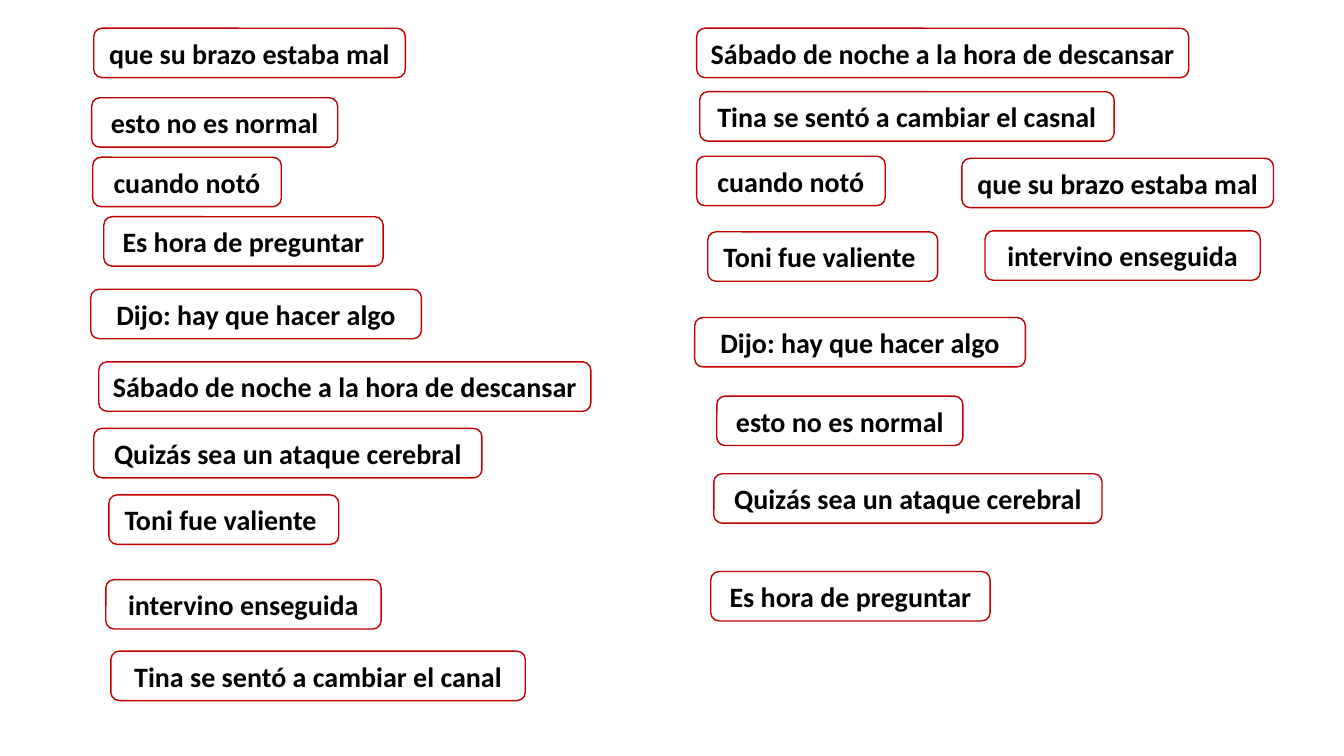
from pptx import Presentation
from pptx.dml.color import RGBColor as RGB
from pptx.enum.shapes import MSO_SHAPE as Shape
from pptx.enum.text import MSO_ANCHOR as Anchor, PP_ALIGN as Align
from pptx.util import Inches, Pt

COLORS = {"fill": "FFFFFF", "line": "C00000", "text": "000000"}

deck = Presentation()
deck.slide_width, deck.slide_height = Inches(13.33), Inches(7.5)
slide = deck.slides.add_slide(deck.slide_layouts[6])

# Fine grid: 1333 columns by 750 rows
col = deck.slide_width / 1333
row = deck.slide_height / 750
HIGH = 49

# Each verse: text, width, (column, row) when mixed, (column, row) when sorted
verses = [
    ("Quizás sea un ataque cerebral", 385, (93, 425), (708, 470)),
    ("esto no es normal", 244, (91, 97), (711, 393)),
    ("intervino enseguida", 273, (105, 575), (977, 229)),
    ("Es hora de preguntar", 277, (103, 215), (705, 567)),
    ("que su brazo estaba mal", 309, (93, 28), (954, 157)),
    ("Dijo: hay que hacer algo", 328, (90, 287), (689, 315)),
    ("cuando notó", 187, (92, 156), (691, 155)),
    ("Toni fue valiente ", 228, (108, 491), (702, 230)),
    ("Tina se sentó a cambiar el canal", 411, (110, 646), (694, 91)),
    ("Sábado de noche a la hora de descansar ", 488, (98, 359), (691, 28)),
]
# Wording that differs in the sorted half
sorted_text = {
    "Tina se sentó a cambiar el canal": "Tina se sentó a cambiar el casnal",
}


def add_card(text, wide, spot):
    x, y = spot
    card = slide.shapes.add_shape(
        Shape.ROUNDED_RECTANGLE,
        round(x * col), round(y * row), round(wide * col), round(HIGH * row))
    card.shadow.inherit = False
    card.fill.solid()
    card.fill.fore_color.rgb = RGB.from_string(COLORS["fill"])
    card.line.color.rgb = RGB.from_string(COLORS["line"])
    card.line.width = Pt(1)

    frame = card.text_frame
    frame.text = text
    frame.word_wrap = True
    frame.vertical_anchor = Anchor.MIDDLE
    para = frame.paragraphs[0]
    para.alignment = Align.CENTER
    font = para.runs[0].font
    font.name, font.size, font.bold = "Calibri", Pt(20), True
    font.color.rgb = RGB.from_string(COLORS["text"])


# Mixed verses on the left
for text, wide, mixed, _ in verses:
    add_card(text, wide, mixed)

# Sorted verses on the right
for text, wide, _, final in verses:
    add_card(sorted_text.get(text, text), wide, final)

deck.save("out.pptx")
